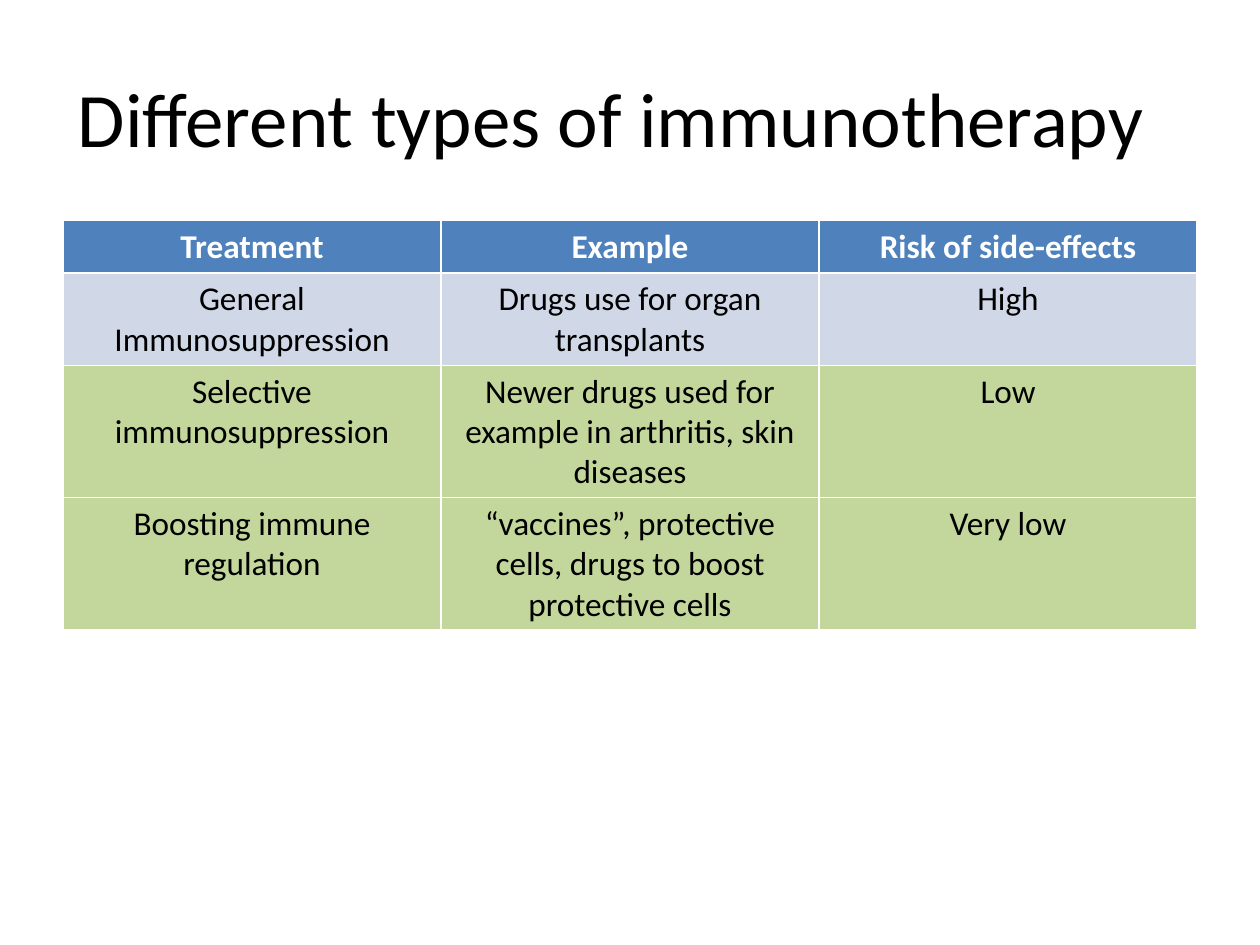
from pptx import Presentation
from pptx.dml.color import RGBColor
from pptx.enum.text import MSO_ANCHOR, PP_ALIGN
from pptx.util import Pt

BLACK = RGBColor(0, 0, 0)
WHITE = RGBColor(255, 255, 255)
BLUE = RGBColor(0x4F, 0x81, 0xBD)
PALE = RGBColor(0xD0, 0xD8, 0xE8)
GREEN = RGBColor(0xC3, 0xD6, 0x9B)

# Content
TITLE = "Different types of immunotherapy"
HEAD = {"size": Pt(19), "bold": True, "color": WHITE}
BODY = {"size": Pt(19), "bold": False, "color": BLACK}
ROWS = [  # height, fill, text format, cells
    (29.5, BLUE, HEAD, ("Treatment", "Example", "Risk of side-effects")),
    (50.4, PALE, BODY, ("General Immunosuppression",
                        "Drugs use for organ transplants", "High")),
    (72, GREEN, BODY, ("Selective immunosuppression",
                       "Newer drugs used for example in arthritis, skin diseases",
                       "Low")),
    (72, GREEN, BODY, ("Boosting immune regulation",
                       "“vaccines”, protective cells, drugs to boost protective cells",
                       "Very low")),
]
WIDTH = 648


def write(frame, text, form):
    """Put one centred line of formatted text in a frame."""
    para = frame.paragraphs[0]
    para.alignment = PP_ALIGN.CENTER
    run = para.add_run()
    run.text = text
    run.font.name = "Calibri"
    for key, value in form.items():
        if key == "color":
            run.font.color.rgb = value
        else:
            setattr(run.font, key, value)


deck = Presentation()
deck.slide_width, deck.slide_height = Pt(720), Pt(540)
slide = deck.slides.add_slide(deck.slide_layouts[6])

# Title
frame = slide.shapes.add_textbox(Pt(25.2), Pt(21.6), Pt(WIDTH), Pt(90)).text_frame
frame.word_wrap = True
frame.vertical_anchor = MSO_ANCHOR.MIDDLE
write(frame, TITLE, {"size": Pt(44), "color": BLACK})

# Table: the default style supplies the white borders
total = sum(row[0] for row in ROWS)
table = slide.shapes.add_table(len(ROWS), len(ROWS[0][3]), Pt(36), Pt(126),
                               Pt(WIDTH), Pt(total)).table
table.horz_banding = False
for line, (height, fill, form, texts) in zip(table.rows, ROWS):
    line.height = Pt(height)
    for cell, text in zip(line.cells, texts):
        cell.fill.solid()
        cell.fill.fore_color.rgb = fill
        write(cell.text_frame, text, form)

deck.save("out.pptx")
